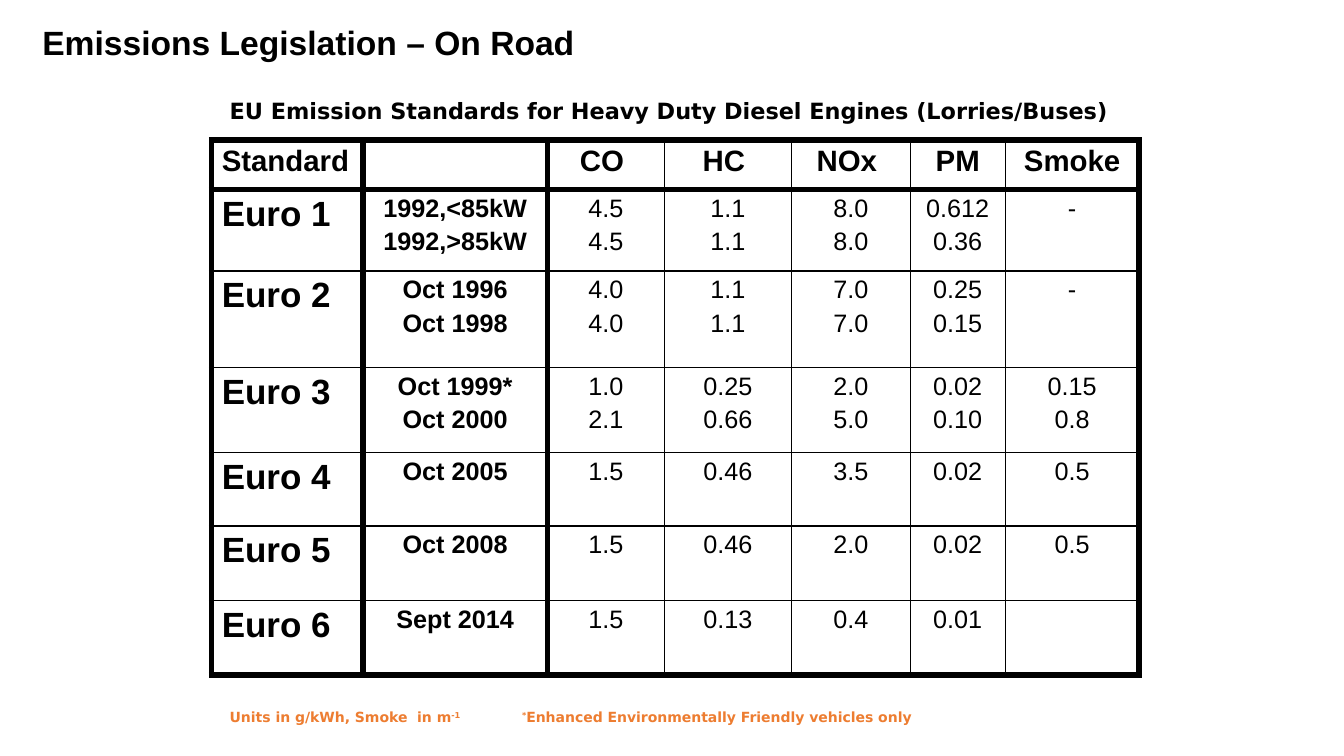
from lxml.etree import SubElement
from pptx import Presentation
from pptx.dml.color import RGBColor
from pptx.enum.text import MSO_ANCHOR as Anchor, MSO_AUTO_SIZE as AutoSize, PP_ALIGN as Align
from pptx.oxml.ns import qn
from pptx.util import Inches, Pt

SLIDE_WIDTH, SLIDE_HEIGHT = Inches(13.33), Inches(7.5)
COLORS = {"ink": "000000", "paper": "FFFFFF", "note": "ED7D31"}

# Places as percentages of the slide: left, top, width, height
TITLE_BOX = (2.4, 1.87, 71.72, 8.93)
CAPTION_BOX = (16.35, 12.13, 73.52, 4.93)
NOTE_BOX = (16.35, 93.07, 60.84, 3.6)
TABLE_BOX = (15.75, 18.53, 69.02, 70.8)

# Table grid in inches, and the grid lines drawn thick
COLUMN_WIDTHS = (1.5, 1.83, 1.16, 1.26, 1.18, 0.94, 1.33)
ROW_HEIGHTS = (0.49, 0.81, 0.96, 0.84, 0.73, 0.74, 0.74)
THICK_COLUMN_LINES = {0, 1, 2, len(COLUMN_WIDTHS)}
THICK_ROW_LINES = {0, 1, len(ROW_HEIGHTS)}

# A line break separates the paragraphs of a cell
STANDARDS = (
    ("Standard", "", "CO ", "HC ", "NOx ", "PM", "Smoke"),
    ("Euro 1", "1992,<85kW\n1992,>85kW", "4.5\n4.5", "1.1\n1.1", "8.0\n8.0", "0.612\n0.36", "-"),
    ("Euro 2", "Oct 1996\nOct 1998", "4.0\n4.0", "1.1\n1.1", "7.0\n7.0", "0.25\n0.15", "-"),
    ("Euro 3", "Oct 1999*\nOct 2000", "1.0\n2.1", "0.25\n0.66", "2.0\n5.0", "0.02\n0.10", "0.15\n0.8"),
    ("Euro 4", "Oct 2005", "1.5", "0.46", "3.5", "0.02", "0.5"),
    ("Euro 5", "Oct 2008", "1.5", "0.46", "2.0", "0.02", "0.5"),
    ("Euro 6", "Sept 2014", "1.5", "0.13", "0.4", "0.01", ""),
)


def place(box):
    """Turn percentages of the slide into lengths."""
    sides = (SLIDE_WIDTH, SLIDE_HEIGHT) * 2
    return [int(side * share / 100) for side, share in zip(sides, box)]


def set_font(paragraph, name, size, color, bold=True):
    font = paragraph.font
    font.name, font.size, font.bold = name, Pt(size), bold
    font.color.rgb = RGBColor.from_string(COLORS[color])


def set_space_before(paragraph, percent):
    """Space before a paragraph as a share of its line."""
    paragraph.space_before = Pt(0)
    spacing = paragraph._p.pPr.find(qn("a:spcBef"))
    spacing.remove(spacing[0])
    SubElement(spacing, qn("a:spcPct"), val=str(percent * 1000))


def add_title(slide, text):
    title = slide.shapes.title
    title.left, title.top, title.width, title.height = place(TITLE_BOX)
    frame = title.text_frame
    frame.text = text
    frame.auto_size = AutoSize.NONE
    frame.vertical_anchor = Anchor.TOP
    frame.margin_top = Inches(0.08)
    paragraph = frame.paragraphs[0]
    paragraph.alignment = Align.LEFT
    set_font(paragraph, "Arial", 24, "ink")


def add_line(slide, box, parts, size, color):
    """A text box of one paragraph; parts are (text, raised) pairs."""
    frame = slide.shapes.add_textbox(*place(box)).text_frame
    frame.word_wrap = True
    frame.auto_size = AutoSize.SHAPE_TO_FIT_TEXT
    paragraph = frame.paragraphs[0]
    set_font(paragraph, "DejaVu Sans", size, color)
    set_space_before(paragraph, 50)
    for text, raised in parts:
        run = paragraph.add_run()
        run.text = text
        if raised:
            run.font._element.set("baseline", "30000")
    return paragraph


def add_tab_stop(paragraph, position):
    # Tab stops come before the default run properties
    properties = paragraph._p.get_or_add_pPr()
    tabs = SubElement(properties, qn("a:tabLst"))
    SubElement(tabs, qn("a:tab"), pos=str(Inches(position)), algn="l")
    properties.find(qn("a:defRPr")).addprevious(tabs)


def set_borders(cell, row, column):
    properties = cell._tc.get_or_add_tcPr()
    thick_sides = {
        "lnL": column in THICK_COLUMN_LINES,
        "lnR": column + 1 in THICK_COLUMN_LINES,
        "lnT": row in THICK_ROW_LINES,
        "lnB": row + 1 in THICK_ROW_LINES,
    }
    for side, thick in thick_sides.items():
        line = SubElement(properties, qn(f"a:{side}"), w=str(Pt(4.5 if thick else 1)))
        fill = SubElement(line, qn("a:solidFill"))
        SubElement(fill, qn("a:srgbClr"), val=COLORS["ink"])


def fill_cell(cell, text, row, column):
    set_borders(cell, row, column)
    cell.fill.solid()
    cell.fill.fore_color.rgb = RGBColor.from_string(COLORS["paper"])
    cell.text = text
    size = 21 if row == 0 else 25 if column == 0 else 18
    for paragraph in cell.text_frame.paragraphs:
        paragraph.alignment = Align.LEFT if column == 0 else Align.CENTER
        set_font(paragraph, "Arial", size, "ink", bold=row == 0 or column < 2)
        set_space_before(paragraph, 20)


def add_standards_table(slide):
    table = slide.shapes.add_table(
        len(ROW_HEIGHTS), len(COLUMN_WIDTHS), *place(TABLE_BOX)).table
    for column, width in zip(table.columns, COLUMN_WIDTHS):
        column.width = Inches(width)
    for row, height in zip(table.rows, ROW_HEIGHTS):
        row.height = Inches(height)
    for row_index, texts in enumerate(STANDARDS):
        for column_index, text in enumerate(texts):
            fill_cell(table.cell(row_index, column_index), text, row_index, column_index)


def main():
    presentation = Presentation()
    presentation.slide_width, presentation.slide_height = SLIDE_WIDTH, SLIDE_HEIGHT
    slide = presentation.slides.add_slide(presentation.slide_layouts[5])

    # Heading and table
    add_title(slide, "Emissions Legislation – On Road")
    add_line(slide, CAPTION_BOX,
             [("EU Emission Standards for Heavy Duty Diesel Engines (Lorries/Buses)", False)],
             16, "ink")
    add_standards_table(slide)

    # Units and footnote on one line
    note = add_line(slide, NOTE_BOX, [
        ("Units in g/kWh, Smoke  in m", False),
        ("-1\t*", True),
        ("Enhanced Environmentally Friendly vehicles only", False),
    ], 10, "note")
    add_tab_stop(note, 2.9)

    presentation.save("out.pptx")


if __name__ == "__main__":
    main()
